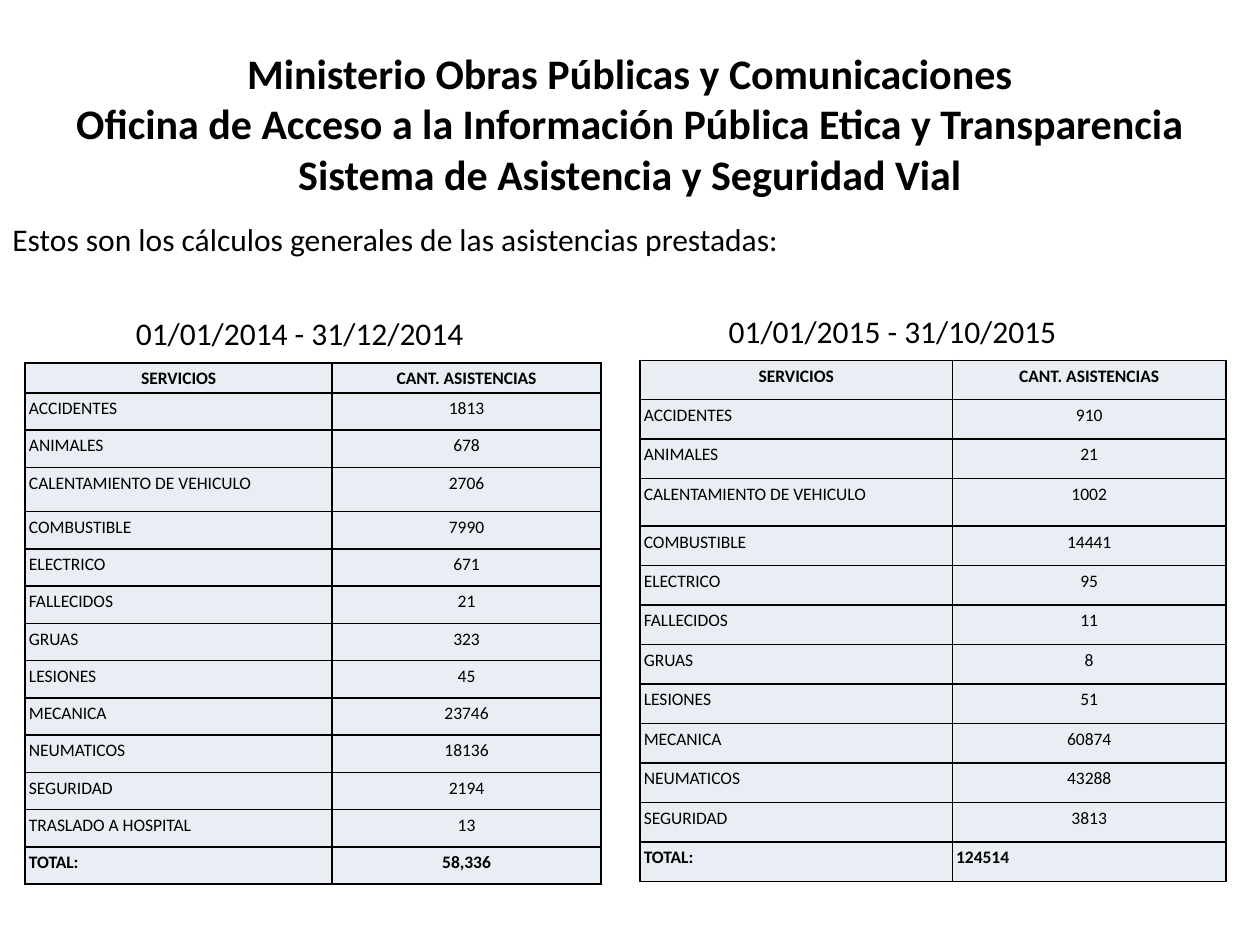
from lxml import etree
from pptx import Presentation
from pptx.dml.color import RGBColor
from pptx.enum.text import MSO_ANCHOR, PP_ALIGN
from pptx.oxml.ns import qn
from pptx.util import Inches, Pt

LEFT, MID, JUST = PP_ALIGN.LEFT, PP_ALIGN.CENTER, PP_ALIGN.JUSTIFY
TOP, CORE = MSO_ANCHOR.TOP, MSO_ANCHOR.MIDDLE
BLACK = RGBColor(0x00, 0x00, 0x00)
PALE = RGBColor(0xE9, 0xED, 0xF4)
FONT = "Calibri"
SPLIT = 0.533
PAD = Inches(0.03)

TITLE = "\v".join([
    "Ministerio Obras Públicas y Comunicaciones",
    "Oficina de Acceso a la Información Pública Etica y Transparencia",
    "Sistema de Asistencia y Seguridad Vial",
])
INTRO = "Estos son los cálculos generales de las asistencias prestadas:"
HEAD = ("SERVICIOS", "CANT. ASISTENCIAS")
NAMES = ["ACCIDENTES", "ANIMALES", "CALENTAMIENTO DE VEHICULO", "COMBUSTIBLE",
         "ELECTRICO", "FALLECIDOS", "GRUAS", "LESIONES", "MECANICA",
         "NEUMATICOS", "SEGURIDAD", "TRASLADO A HOSPITAL"]
OLD = [1813, 678, 2706, 7990, 671, 21, 323, 45, 23746, 18136, 2194, 13]
NEW = [910, 21, 1002, 14441, 95, 11, 8, 51, 60874, 43288, 3813]
TALL = NAMES.index("CALENTAMIENTO DE VEHICULO") + 1


def style(par, size, bold, align):
    """Set the font and alignment of a paragraph."""
    par.alignment = align
    font = par.font
    font.name, font.size, font.bold = FONT, Pt(size), bold
    font.color.rgb = BLACK


def label(slide, box, text, size=18, bold=False, align=LEFT, anchor=TOP):
    """Add a text box whose place is given in inches."""
    frame = slide.shapes.add_textbox(*map(Inches, box)).text_frame
    frame.word_wrap = True
    frame.vertical_anchor = anchor
    par = frame.paragraphs[0]
    par.text = text
    style(par, size, bold, align)


def frame_cell(cell):
    """Draw a thin black border on all sides of a cell."""
    props = cell._tc.get_or_add_tcPr()
    for spot, side in enumerate(("a:lnL", "a:lnR", "a:lnT", "a:lnB")):
        line = etree.Element(qn(side), w=str(Pt(1)))
        fill = etree.SubElement(line, qn("a:solidFill"))
        etree.SubElement(fill, qn("a:srgbClr"), val=str(BLACK))
        props.insert(spot, line)


def fill_cell(cell, text, bold, align):
    """Write and style one table cell."""
    cell.margin_left = cell.margin_right = PAD
    cell.margin_top = cell.margin_bottom = PAD
    cell.fill.solid()
    cell.fill.fore_color.rgb = PALE
    frame_cell(cell)
    par = cell.text_frame.paragraphs[0]
    par.text = text
    par.line_spacing = 1.07
    style(par, 10, bold, align)


def add_grid(slide, box, counts, total, first, tall, end):
    """Add a table of services, sharing the free height among plain rows."""
    body = [(name, str(num)) for name, num in zip(NAMES, counts)]
    rows = [HEAD, *body, ("TOTAL:", total)]
    last = len(rows) - 1
    grid = slide.shapes.add_table(len(rows), 2, *map(Inches, box)).table
    wide, high = box[2:]
    for col, share in zip(grid.columns, (SPLIT, 1 - SPLIT)):
        col.width = Inches(wide * share)
    plain = (high - first - tall) / (len(rows) - 2)
    sizes = {0: first, TALL: tall}
    aligns = {0: (MID, MID), last: (LEFT, end)}
    for i, texts in enumerate(rows):
        grid.rows[i].height = Inches(sizes.get(i, plain))
        for j, text in enumerate(texts):
            align = aligns.get(i, (LEFT, MID))[j]
            fill_cell(grid.cell(i, j), text, i in (0, last), align)


def main():
    """Build the slide and save it."""
    deck = Presentation()
    deck.slide_width, deck.slide_height = Inches(10), Inches(7.5)
    slide = deck.slides.add_slide(deck.slide_layouts[6])
    label(slide, (0, 1.7, 10, 0.71), INTRO, align=JUST)
    label(slide, (0, 0.44, 10, 1.07), TITLE, 24, True, MID, CORE)
    add_grid(slide, (0.2, 2.88, 4.57, 4.13), OLD, "58,336", 0.23, 0.35, MID)
    label(slide, (0.98, 2.44, 3.23, 0.4), "01/01/2014 - 31/12/2014")
    label(slide, (5, 2.43, 4.17, 0.4), "01/01/2015 - 31/10/2015", align=MID)
    add_grid(slide, (5.08, 2.86, 4.65, 4.14), NEW, "124514", 0.31, 0.38, LEFT)
    deck.save("out.pptx")


if __name__ == "__main__":
    main()
